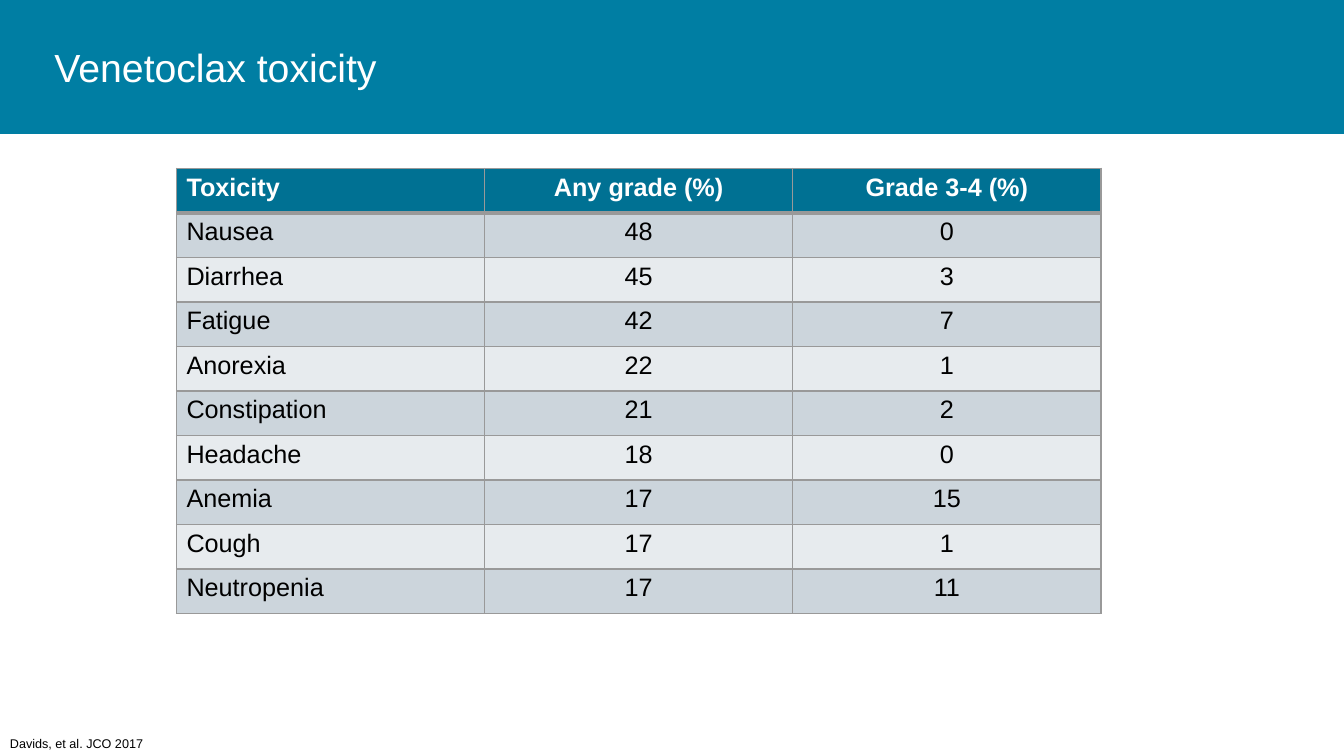
import pptx
import pptx.util
import pptx.dml.color
import pptx.enum.shapes
import pptx.enum.text
import pptx.oxml
import pptx.oxml.ns

Inches, Pt = pptx.util.Inches, pptx.util.Pt
PP_ALIGN = pptx.enum.text.PP_ALIGN


def rgb(value):
    return pptx.dml.color.RGBColor.from_string(value)


def set_borders(cell, color, widths):
    tcPr = cell._tc.get_or_add_tcPr()
    # Border lines come before the fill in the cell properties
    for i, (side, width) in enumerate(zip("LRTB", widths)):
        tcPr.insert(i, pptx.oxml.parse_xml(
            f'<a:ln{side} {pptx.oxml.ns.nsdecls("a")} w="{Pt(width)}">'
            f'<a:solidFill><a:srgbClr val="{color}"/></a:solidFill></a:ln{side}>'))


prs = pptx.Presentation()
prs.slide_width, prs.slide_height = Inches(13.33), Inches(7.5)
s = prs.slides.add_slide(prs.slide_layouts[5])

# Title
title = s.shapes.title
title.left, title.top = Inches(0.44), Inches(0)
title.width, title.height = Inches(12.33), Inches(1.33)
tf = title.text_frame
tf.text = "Venetoclax toxicity"
tf.vertical_anchor = pptx.enum.text.MSO_ANCHOR.MIDDLE
p = tf.paragraphs[0]
p.alignment = PP_ALIGN.LEFT
p.font.name, p.font.size = "Arial", Pt(28)
p.font.color.rgb = rgb("FFFFFF")

# Header band, behind the title
band = s.shapes.add_shape(pptx.enum.shapes.MSO_SHAPE.RECTANGLE,
                          0, 0, prs.slide_width, Inches(1.33))
band.shadow.inherit = False
band.fill.solid()
band.fill.fore_color.rgb = rgb("007EA3")
band.line.fill.background()
title.element.addprevious(band.element)

# Citation
tf = s.shapes.add_textbox(Inches(0), Inches(7.25), Inches(2.78), Inches(0.25)).text_frame
tf.word_wrap = True
tf.text = "Davids, et al. JCO 2017"
p = tf.paragraphs[0]
p.font.name, p.font.size = "Arial", Pt(9)
p.font.color.rgb = rgb("000000")

# Toxicity table
rows = [
    ("Toxicity", "Any grade (%)", "Grade 3-4 (%)"),
    ("Nausea", 48, 0),
    ("Diarrhea", 45, 3),
    ("Fatigue", 42, 7),
    ("Anorexia", 22, 1),
    ("Constipation", 21, 2),
    ("Headache", 18, 0),
    ("Anemia", 17, 15),
    ("Cough", 17, 1),
    ("Neutropenia", 17, 11),
]
table = s.shapes.add_table(len(rows), 3, Inches(1.75), Inches(1.67),
                           Inches(9.17), Inches(4.42)).table
for r, values in enumerate(rows):
    header = r == 0
    fill = "007193" if header else ("E7EBEE", "CCD5DC")[r % 2]
    for c, value in enumerate(values):
        cell = table.cell(r, c)
        cell.text = str(value)
        cell.fill.solid()
        cell.fill.fore_color.rgb = rgb(fill)
        set_borders(cell, "999999", (1, 1, 1, 3 if header else 1))
        p = cell.text_frame.paragraphs[0]
        p.alignment = PP_ALIGN.CENTER if c else PP_ALIGN.LEFT
        p.font.name, p.font.size, p.font.bold = "Arial", Pt(18), header
        p.font.color.rgb = rgb("FFFFFF" if header else "000000")

prs.save("out.pptx")
